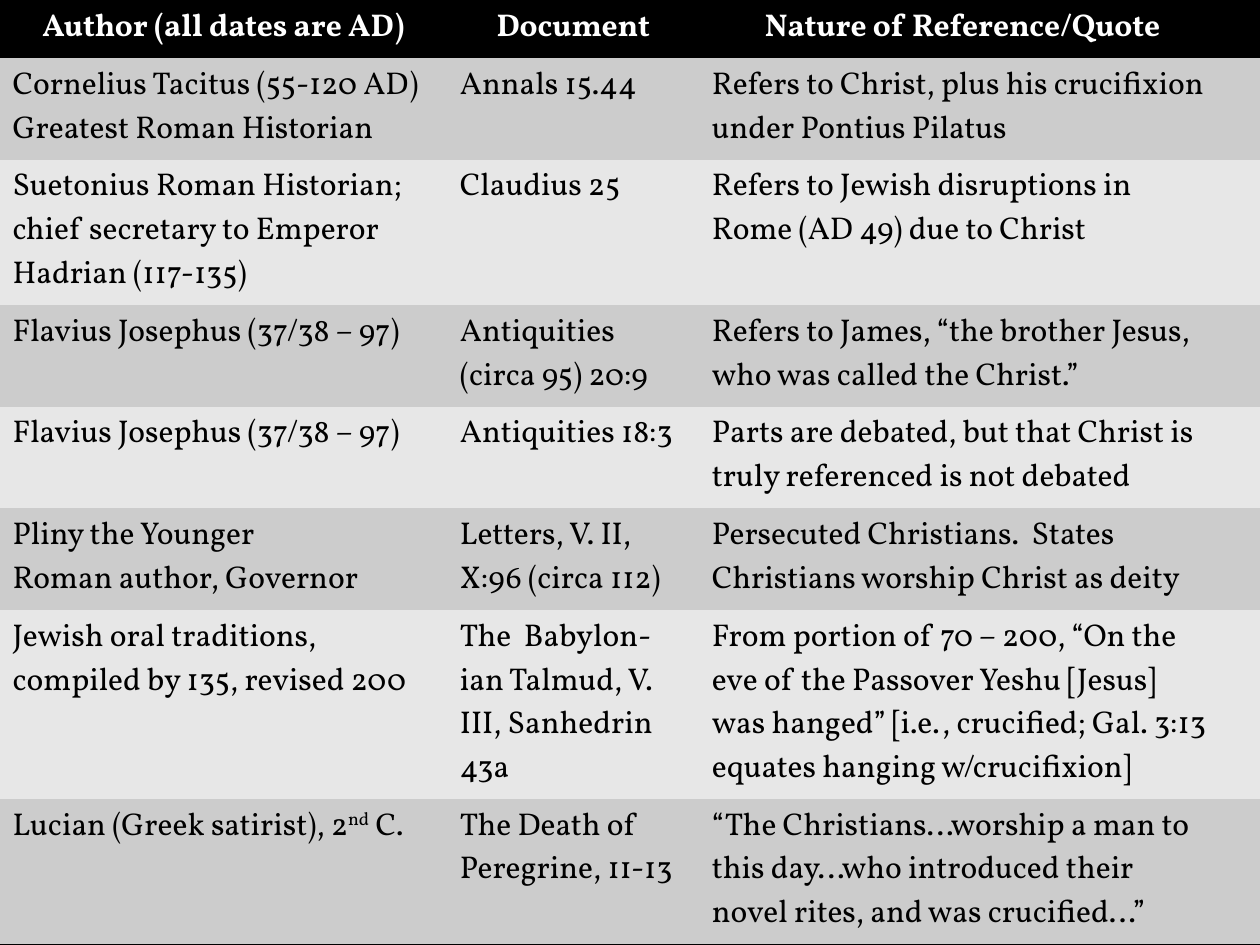
"""Build a slide tabulating early non-Christian references to Christ."""
from dataclasses import dataclass

from pptx import Presentation
from pptx.dml.color import RGBColor
from pptx.enum.text import PP_ALIGN
from pptx.oxml.ns import qn
from pptx.util import Inches, Pt


@dataclass(frozen=True)
class Theme:
    font: str = "Vollkorn"
    size: int = 18
    black: str = "000000"
    white: str = "FFFFFF"
    bands: tuple[str, str] = ("CCCCCC", "E7E7E7")
    plain_table: str = "{2D5ABB26-0587-4C30-8999-92F81FD0307C}"
    raised: str = "30000"


@dataclass(frozen=True)
class Run:
    text: str
    superscript: bool = False


@dataclass(frozen=True)
class Reference:
    author: tuple[tuple[Run, ...], ...]
    document: str
    quote: str
    lines: int


THEME = Theme()
WIDTH, HEIGHT = 10, 7.5
COLUMN_SHARES = (0.355, 0.2, 0.418, 0.027)
LINE, PADDING = 0.346, 0.115
HEADINGS = ("Author (all dates are AD)", "Document", "Nature of Reference/Quote")


def plain(*texts: str) -> tuple[tuple[Run, ...], ...]:
    """Make one single-run paragraph from each text."""
    return tuple((Run(text),) for text in texts)


REFERENCES = (
    Reference(plain("Cornelius Tacitus (55-120 AD)", "Greatest Roman Historian"),
              "Annals 15.44",
              "Refers to Christ, plus his crucifixion under Pontius Pilatus", 2),
    Reference(plain("Suetonius Roman Historian; chief secretary to Emperor Hadrian (117-135)"),
              "Claudius 25",
              "Refers to Jewish disruptions in Rome (AD 49) due to Christ", 3),
    Reference(plain("Flavius Josephus (37/38 – 97)"),
              "Antiquities (circa 95) 20:9",
              "Refers to James, “the brother Jesus, who was called the Christ.”", 2),
    Reference(plain("Flavius Josephus (37/38 – 97)"),
              "Antiquities 18:3",
              "Parts are debated, but that Christ is truly referenced is not debated", 2),
    Reference(plain("Pliny the Younger", "Roman author, Governor"),
              "Letters, V. II, X:96 (circa 112)",
              "Persecuted Christians.  States Christians worship Christ as deity", 2),
    Reference(plain("Jewish oral traditions, compiled by 135, revised 200"),
              "The  Babylon-ian Talmud, V. III, Sanhedrin 43a",
              "From portion of 70 – 200, “On the eve of the Passover Yeshu [Jesus] was hanged” "
              "[i.e., crucified; Gal. 3:13 equates hanging w/crucifixion]", 4),
    Reference(((Run("Lucian (Greek satirist), 2"), Run("nd", True), Run(" C.")),),
              "The Death of Peregrine, 11-13",
              "“The Christians…worship a man to this day…who introduced their novel rites, "
              "and was crucified…”", 3),
)


def write_cell(cell, paragraphs: tuple[tuple[Run, ...], ...], header: bool) -> None:
    """Write the paragraphs of a cell run by run."""
    tf = cell.text_frame
    for i, runs in enumerate(paragraphs):
        p = tf.add_paragraph() if i else tf.paragraphs[0]
        p.alignment = PP_ALIGN.CENTER if header else PP_ALIGN.LEFT
        for run in runs:
            r = p.add_run()
            r.text = run.text
            r.font.name = THEME.font
            r.font.size = Pt(THEME.size)
            r.font.bold = header
            r.font.color.rgb = RGBColor.from_string(THEME.white if header else THEME.black)
            if run.superscript:
                r.font._element.set("baseline", THEME.raised)


def write_row(table, index: int, contents: tuple, lines: int, fill: str) -> None:
    """Size, fill and write one table row."""
    table.rows[index].height = Inches(PADDING + lines * LINE)
    for cell in table.rows[index].cells:
        cell.fill.solid()
        cell.fill.fore_color.rgb = RGBColor.from_string(fill)
    for cell, paragraphs in zip(table.rows[index].cells, contents):
        write_cell(cell, paragraphs, header=index == 0)


def add_reference_table(s) -> None:
    """Add the full-slide table of references."""
    frame = s.shapes.add_table(len(REFERENCES) + 1, len(COLUMN_SHARES),
                               0, 0, Inches(WIDTH), Inches(HEIGHT))
    for style in frame.element.iter(qn("a:tableStyleId")):
        style.text = THEME.plain_table
    table = frame.table
    table.horz_banding = False
    for column, share in zip(table.columns, COLUMN_SHARES):
        column.width = Inches(WIDTH * share)
    write_row(table, 0, tuple(plain(text) for text in HEADINGS), 1, THEME.black)
    for i, ref in enumerate(REFERENCES):
        contents = (ref.author, plain(ref.document), plain(ref.quote))
        write_row(table, i + 1, contents, ref.lines, THEME.bands[i % 2])


def main() -> None:
    """Create and save the presentation."""
    prs = Presentation()
    prs.slide_width, prs.slide_height = Inches(WIDTH), Inches(HEIGHT)
    s = prs.slides.add_slide(prs.slide_layouts[6])
    s.background.fill.solid()
    s.background.fill.fore_color.rgb = RGBColor.from_string(THEME.black)
    add_reference_table(s)
    prs.save("out.pptx")


if __name__ == "__main__":
    main()
